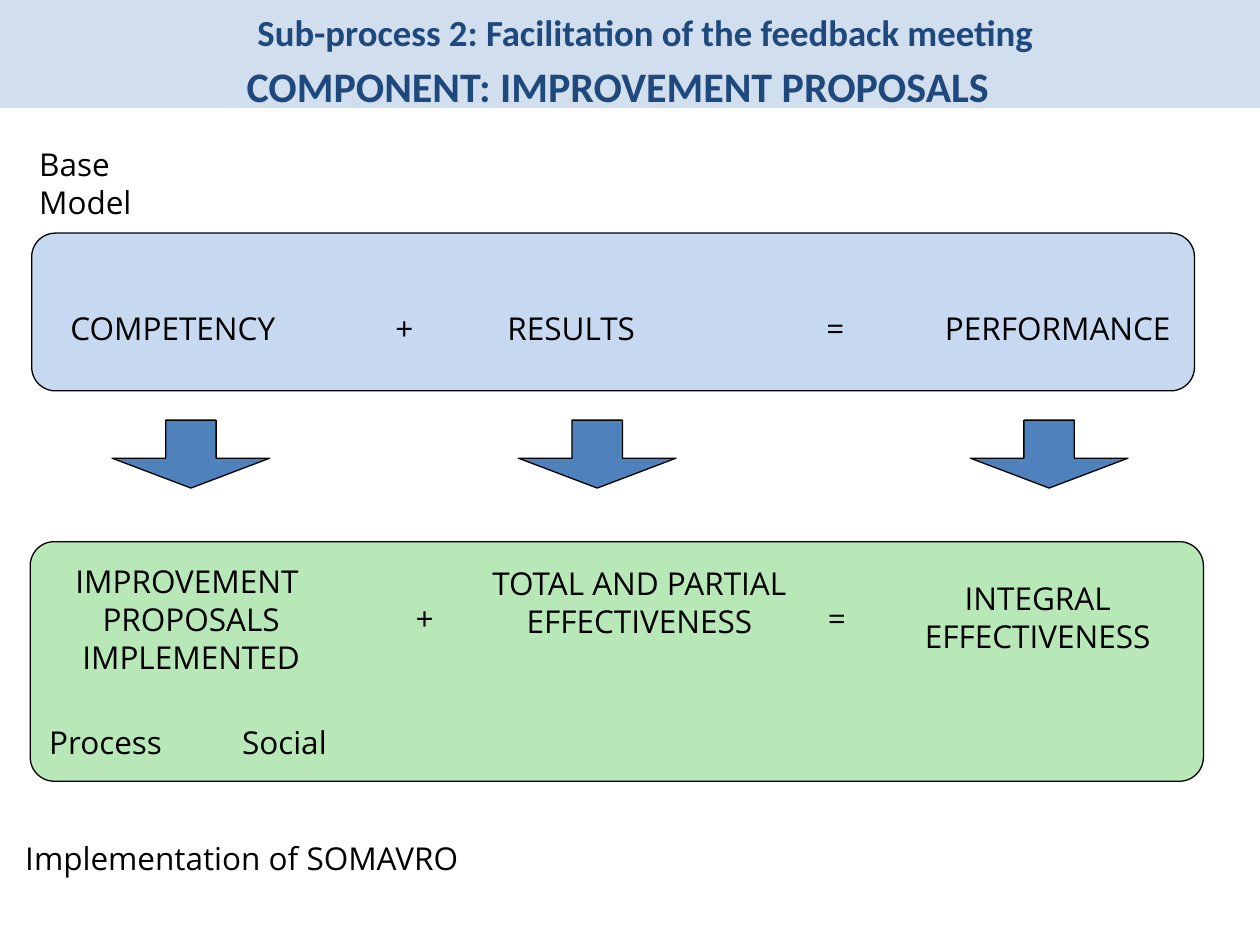
import pptx
import pptx.util
import pptx.dml.color
import pptx.enum.shapes
import pptx.enum.text
import dataclasses


@dataclasses.dataclass
class Theme:
    ink: str = "000000"
    navy: str = "1F497D"
    head: str = "D1DEED"
    blue: str = "C6D9F1"
    green: str = "B9E8B8"
    arrow: str = "4F81BD"
    font: str = "Open Sans"
    bold: str = "Calibri"
    size: int = 18
    top: int = 21
    main: int = 24
    line: float = 0.75


theme = Theme()
Cm = pptx.util.Cm
Rgb = pptx.dml.color.RGBColor.from_string
Kind = pptx.enum.shapes.MSO_SHAPE
Align = pptx.enum.text.PP_ALIGN

deck = pptx.Presentation()
deck.slide_width = Cm(25.4)
deck.slide_height = Cm(19.05)
slide = deck.slides.add_slide(deck.slide_layouts[5])


def draw(kind, box, fill, edge=True, ratios=()):
    shape = slide.shapes.add_shape(kind, *[Cm(n) for n in box])
    shape.shadow.inherit = False
    shape.fill.solid()
    shape.fill.fore_color.rgb = Rgb(fill)
    if edge:
        shape.line.color.rgb = Rgb(theme.ink)
        shape.line.width = pptx.util.Pt(theme.line)
    else:
        shape.line.fill.background()
    for i, ratio in enumerate(ratios):
        shape.adjustments[i] = ratio


def write(text, box, align=Align.LEFT, wrap=True, font=theme.font,
          size=theme.size, color=theme.ink, bold=False, shape=None):
    sides = [Cm(n) for n in box]
    if shape is None:
        shape = slide.shapes.add_textbox(*sides)
    else:
        shape.left, shape.top, shape.width, shape.height = sides
    frame = shape.text_frame
    frame.text = text
    frame.word_wrap = wrap
    frame.auto_size = pptx.enum.text.MSO_AUTO_SIZE.NONE
    frame.vertical_anchor = pptx.enum.text.MSO_ANCHOR.TOP
    frame.margin_left = frame.margin_right = Cm(0.1)
    frame.margin_top = frame.margin_bottom = 0
    for para in frame.paragraphs:
        para.alignment = align
        for run in para.runs:
            run.font.name = font
            run.font.size = pptx.util.Pt(size)
            run.font.bold = bold
            run.font.color.rgb = Rgb(color)


draw(Kind.RECTANGLE, (0, 0, 25.4, 2.18), theme.head, edge=False)
write("Sub-process 2: Facilitation of the feedback meeting",
      (1.73, 0.2, 22.56, 0.89), Align.CENTER, font=theme.bold,
      size=theme.top, color=theme.navy, bold=True, shape=slide.shapes.title)
tree = slide.shapes.title.element.getparent()
tree.append(slide.shapes.title.element)
write("COMPONENT: IMPROVEMENT PROPOSALS", (4.06, 1.22, 16.79, 1.02),
      Align.CENTER, font=theme.bold, size=theme.main, color=theme.navy,
      bold=True)

draw(Kind.ROUNDED_RECTANGLE, (0.64, 4.7, 23.44, 3.18), theme.blue,
     ratios=[0.15])
draw(Kind.ROUNDED_RECTANGLE, (0.61, 10.92, 23.65, 4.83), theme.green,
     ratios=[0.1])
for left in (2.26, 10.45, 19.56):
    draw(Kind.DOWN_ARROW, (left, 8.47, 3.18, 1.37), theme.arrow,
         ratios=[0.32, 0.44])

for text, left, width in (
    ("COMPETENCY", 1.32, 4.37),
    ("+", 7.87, 0.74),
    ("RESULTS", 10.13, 3.15),
    ("=", 16.56, 0.74),
    ("PERFORMANCE", 18.95, 5.16),
):
    write(text, (left, 6.22, width, 0.76), wrap=False)

for text, box in (
    ("IMPROVEMENT \nPROPOSALS\nIMPLEMENTED", (0.91, 11.33, 5.89, 2.44)),
    ("TOTAL AND PARTIAL EFFECTIVENESS", (9.65, 11.38, 6.48, 2.44)),
    ("INTEGRAL EFFECTIVENESS", (17.81, 11.68, 6.22, 1.7)),
):
    write(text, box, Align.CENTER)

for text, left, top, width in (
    ("+", 8.28, 12.07, 0.74),
    ("=", 16.59, 12.07, 0.74),
    ("Process", 0.89, 14.58, 2.62),
    ("Social", 4.78, 14.58, 2.44),
):
    write(text, (left, top, width, 0.76))

write("Base Model", (0.69, 2.92, 2.8, 1.53))
write("Implementation of SOMAVRO", (0.41, 16.92, 8.84, 0.76), wrap=False)

deck.save("out.pptx")
